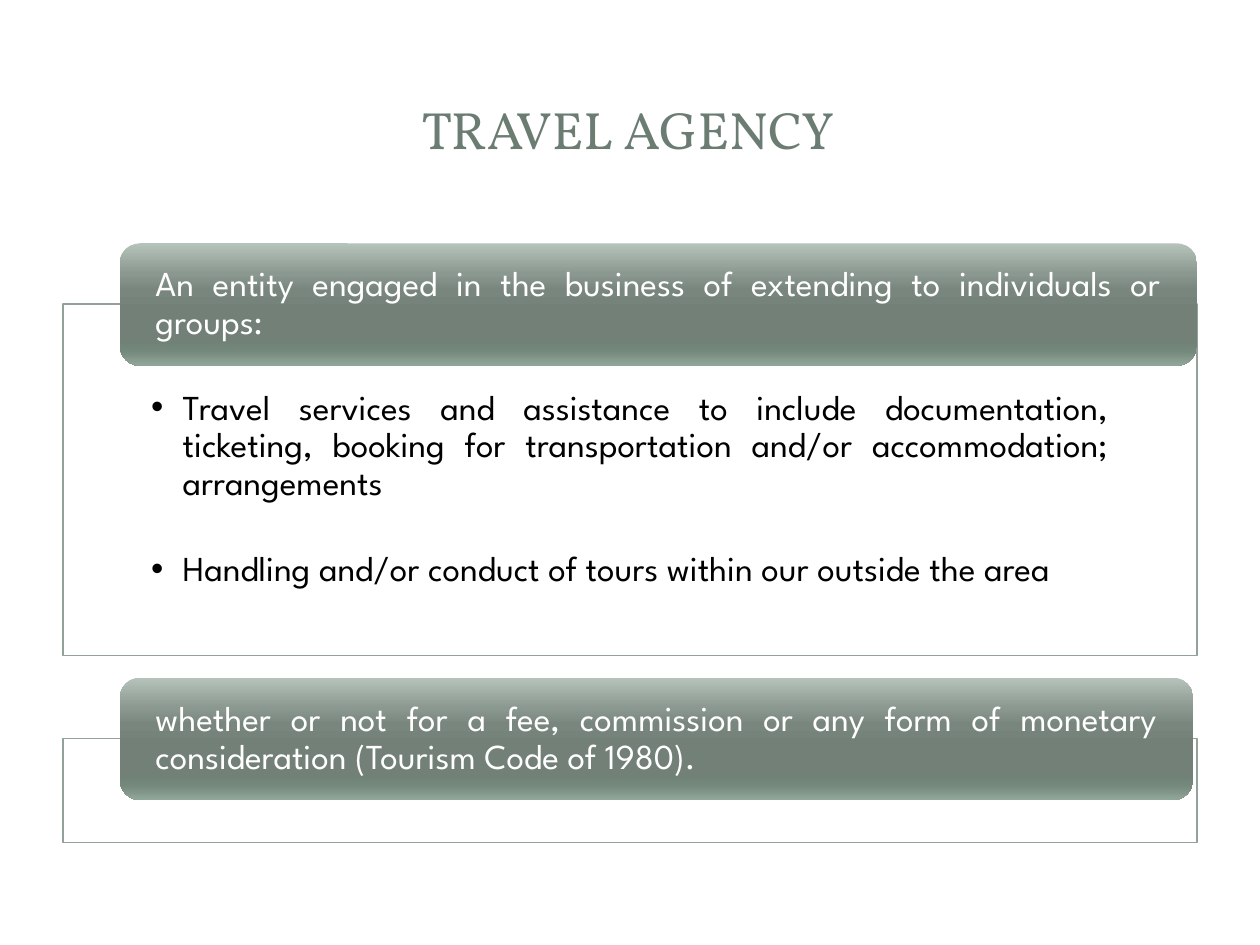
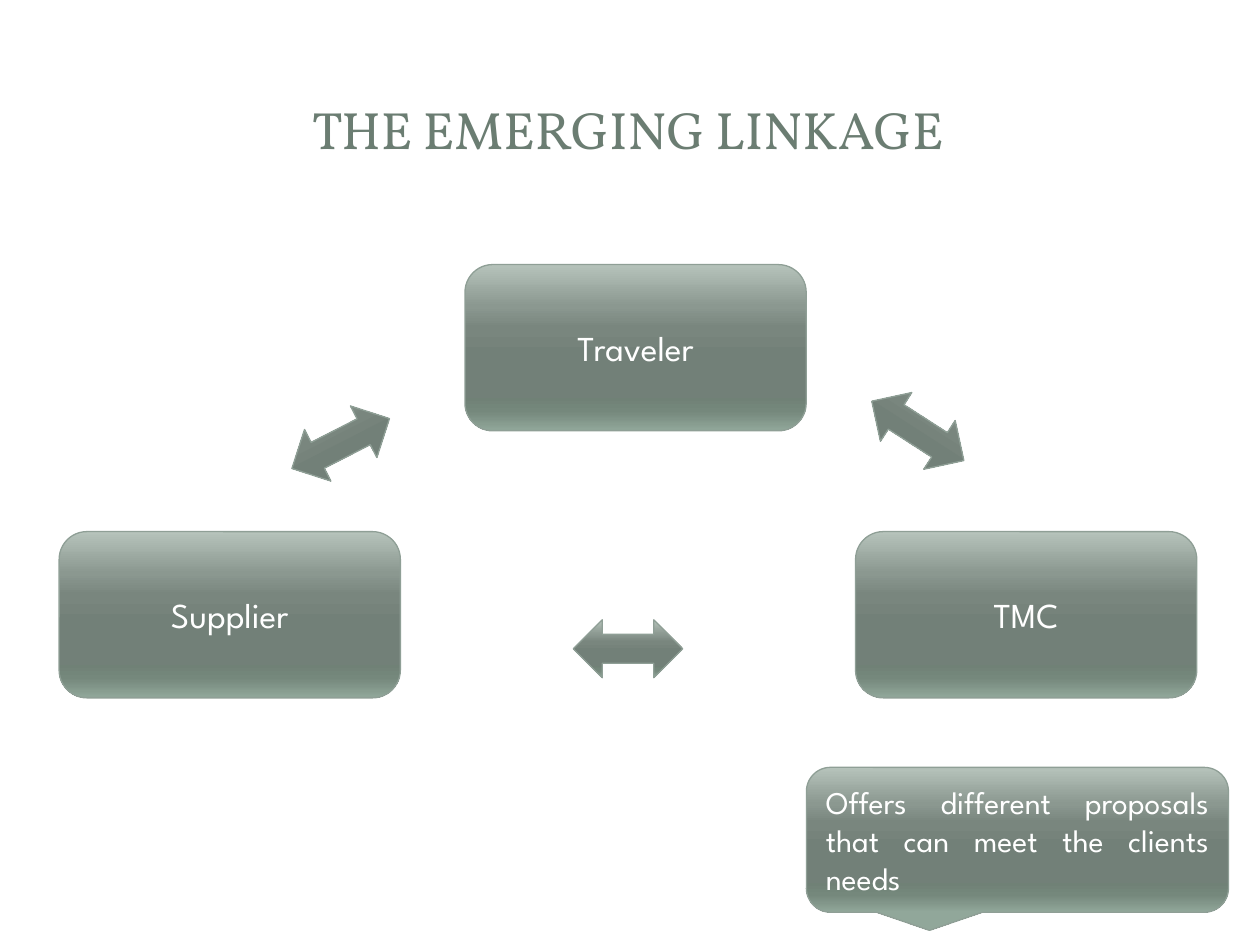
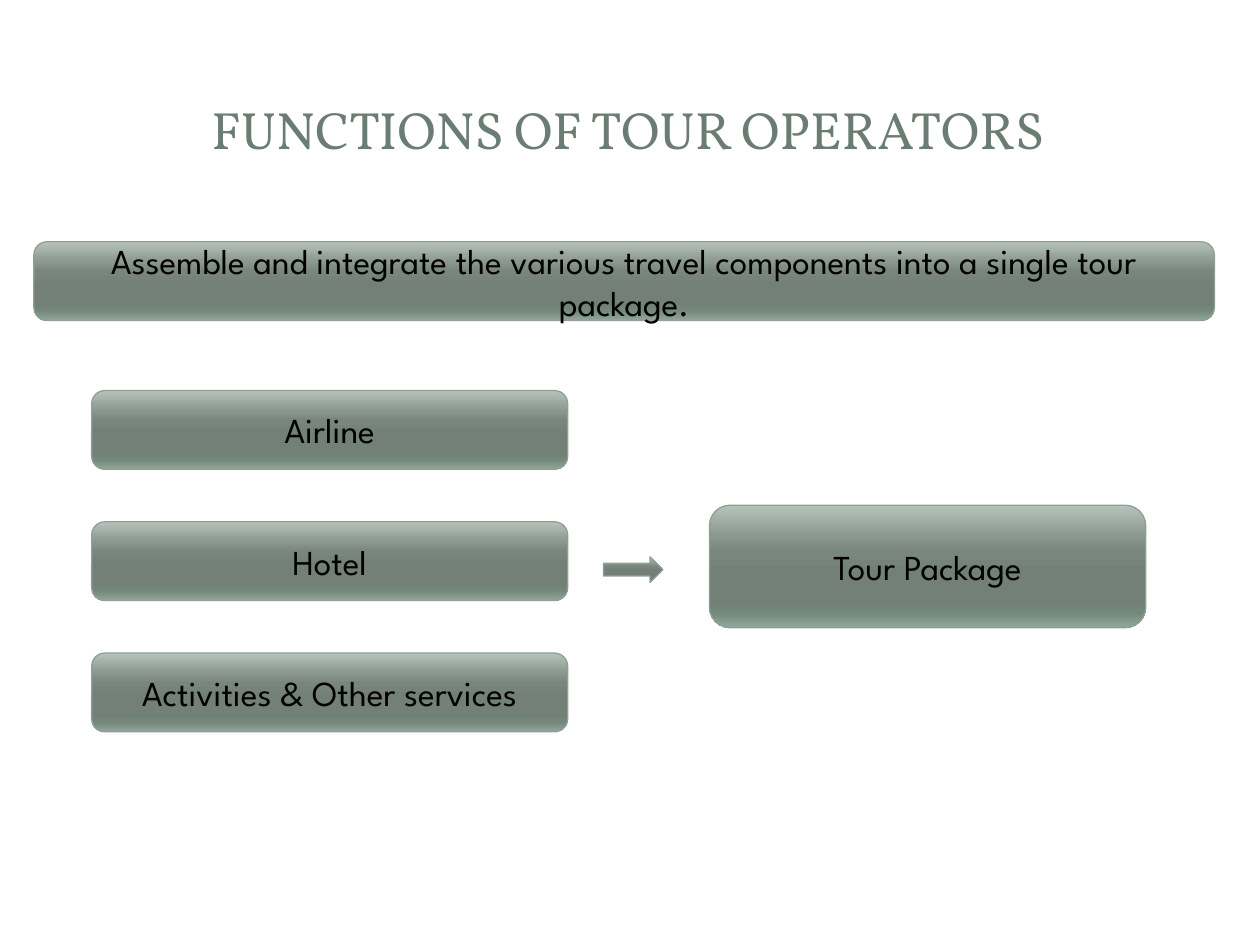
from collections import namedtuple
from copy import deepcopy

from pptx import Presentation
from pptx.dml.color import RGBColor
from pptx.enum import shapes, text
from pptx.oxml.ns import qn
from pptx.util import Pt

Box = namedtuple("Box", "left top width height")

KIND = shapes.MSO_SHAPE
ALIGN = text.PP_ALIGN
HEADING_FONT, TEXT_FONT = "Vollkorn", "League Spartan"
TITLE_COLOUR, PANEL_LINE, SHAPE_LINE = "6B7D72", "93A299", "8F9F96"
WHITE, BLACK = "FFFFFF", "000000"
SHEEN = [(0, "B6C3BB"), (0.25, "8B9890"), (0.38, "79867E"), (0.55, "728078"),
         (0.8, "708176"), (0.88, "75887C"), (1, "91A79A")]
TITLE_BOX = Box(33.8, 32.4, 650.2, 82.1)
TITLE_AND_BODY, TITLE_ONLY = 1, 5


def rgb(value):
    return RGBColor.from_string(value)


def inside(box, left, top, width, height):
    """Return a box whose corner is measured from the corner of another."""
    return Box(box.left + left, box.top + top, width, height)


def place(shape, box):
    shape.left, shape.top, shape.width, shape.height = map(Pt, box)


def write(para, words, size=20, font=TEXT_FONT, colour=WHITE,
          align=ALIGN.CENTER, spacing=1.0, after=0):
    span = para.add_run()
    span.text = words
    span.font.size, span.font.name = Pt(size), font
    span.font.color.rgb = rgb(colour)
    para.alignment, para.line_spacing = align, spacing
    para.space_before, para.space_after = Pt(0), Pt(after)


def set_frame(shape, left=7.2, top=3.6, right=7.2, bottom=3.6,
              anchor=text.MSO_ANCHOR.MIDDLE):
    frame = shape.text_frame
    frame.word_wrap, frame.auto_size = True, text.MSO_AUTO_SIZE.NONE
    frame.vertical_anchor = anchor
    frame.margin_left, frame.margin_right = Pt(left), Pt(right)
    frame.margin_top, frame.margin_bottom = Pt(top), Pt(bottom)
    return frame


def outline(shape, colour):
    shape.line.color.rgb = rgb(colour)
    shape.line.width = Pt(0.75)


def fill_sheen(shape):
    """Fill with the shared vertical gradient."""
    shape.fill.gradient()
    shape.fill.gradient_angle = 270
    stops = shape.element.spPr.find(".//" + qn("a:gsLst"))
    while len(stops) < len(SHEEN):
        stops.append(deepcopy(stops[0]))
    for stop, (position, colour) in zip(shape.fill.gradient_stops, SHEEN):
        stop.position = position
        stop.color.rgb = rgb(colour)


def add_plain(page, kind, box):
    shape = page.shapes.add_shape(kind, *map(Pt, box))
    shape.shadow.inherit = False
    return shape


def add_glossy(page, box, words="", kind=KIND.ROUNDED_RECTANGLE, **style):
    shape = add_plain(page, kind, box)
    fill_sheen(shape)
    outline(shape, SHAPE_LINE)
    if words:
        write(set_frame(shape).paragraphs[0], words, **style)
    return shape


def add_page(deck, layout, title):
    page = deck.slides.add_slide(deck.slide_layouts[layout])
    place(page.shapes.title, TITLE_BOX)
    write(set_frame(page.shapes.title).paragraphs[0], title,
          size=30, font=HEADING_FONT, colour=TITLE_COLOUR)
    return page


def style_panel(shape, box):
    place(shape, box)
    shape.fill.solid()
    shape.fill.fore_color.rgb = rgb(WHITE)
    outline(shape, PANEL_LINE)


def add_banner(page, panel, width, words):
    """Lay a heading across the top edge of a panel."""
    banner = add_glossy(page, inside(panel, 32.4, -34.8, width, 70), words,
                        align=ALIGN.JUSTIFY, spacing=0.9)
    set_frame(banner, left=17, top=0, right=17, bottom=0)
    banner.line.fill.background()


def add_definition(page, box):
    services = inside(box, 0, 34.8, box.width, 201)
    body = page.placeholders[1]
    style_panel(body, services)
    frame = set_frame(body, 50.4, 49, 50.4, 11.5, text.MSO_ANCHOR.TOP)
    items = [
        "Travel services and assistance to include documentation, ticketing, "
        "booking for transportation and/or accommodation; arrangements",
        "Handling and/or conduct of tours within our outside the area",
    ]
    for index, item in enumerate(items):
        para = frame.add_paragraph() if index else frame.paragraphs[0]
        write(para, item, colour=BLACK, align=ALIGN.JUSTIFY,
              spacing=0.9, after=27.5)
        properties = para._p.get_or_add_pPr()
        properties.set("marL", str(Pt(18)))
        properties.set("indent", str(Pt(-18)))
    add_banner(page, services, 615.6, "An entity engaged in the business of "
               "extending to individuals or groups:")

    fee = inside(box, 0, 283, box.width, 59.5)
    style_panel(add_plain(page, KIND.RECTANGLE, fee), fee)
    add_banner(page, fee, 613.5, "whether or not for a fee, commission or any "
               "form of monetary consideration (Tourism Code of 1980).")


def add_linkage(page, box):
    parties = [("Traveler", 231.9, 0), ("Supplier", 0, 152.6),
               ("TMC", 455.1, 152.6)]
    for name, left, top in parties:
        add_glossy(page, inside(box, left, top, 195, 95), name)
    for left, top, turn in [(129.6, 85.7, 332.9), (459.4, 78.5, 32.8),
                            (293.8, 203, 0)]:
        arrow = add_glossy(page, inside(box, left, top, 62.6, 33.1),
                           kind=KIND.LEFT_RIGHT_ARROW)
        arrow.rotation = turn
    add_glossy(page, inside(box, 427, 287.3, 241.2, 82.8),
               "Offers different proposals that can meet the clients needs",
               kind=KIND.ROUNDED_RECTANGULAR_CALLOUT,
               size=18, align=ALIGN.JUSTIFY)


def add_assembly(page, box):
    add_glossy(page, inside(box, 0, 0, box.width, 45),
               "Assemble and integrate the various travel components into a "
               "single tour package.", colour=BLACK)
    components = ["Airline", "Hotel", "Activities & Other services"]
    for row, name in enumerate(components):
        add_glossy(page, inside(box, 33, 85 + 75 * row, 272, 45), name,
                   colour=BLACK)
    add_glossy(page, inside(box, 325.4, 180, 34, 14.6), kind=KIND.RIGHT_ARROW)
    add_glossy(page, inside(box, 386, 150.5, 249.3, 70), "Tour Package",
               colour=BLACK)


def main():
    deck = Presentation()
    deck.slide_width, deck.slide_height = Pt(720), Pt(540)
    add_definition(add_page(deck, TITLE_AND_BODY, "TRAVEL AGENCY"),
                   Box(36, 139, 648, 342.5))
    add_linkage(add_page(deck, TITLE_ONLY, "THE EMERGING LINKAGE"),
                Box(33.8, 151.2, 668.2, 370.1))
    add_assembly(add_page(deck, TITLE_ONLY, "FUNCTIONS OF TOUR OPERATORS"),
                 Box(19.4, 138.2, 674.6, 280))
    deck.save("out.pptx")


if __name__ == "__main__":
    main()
